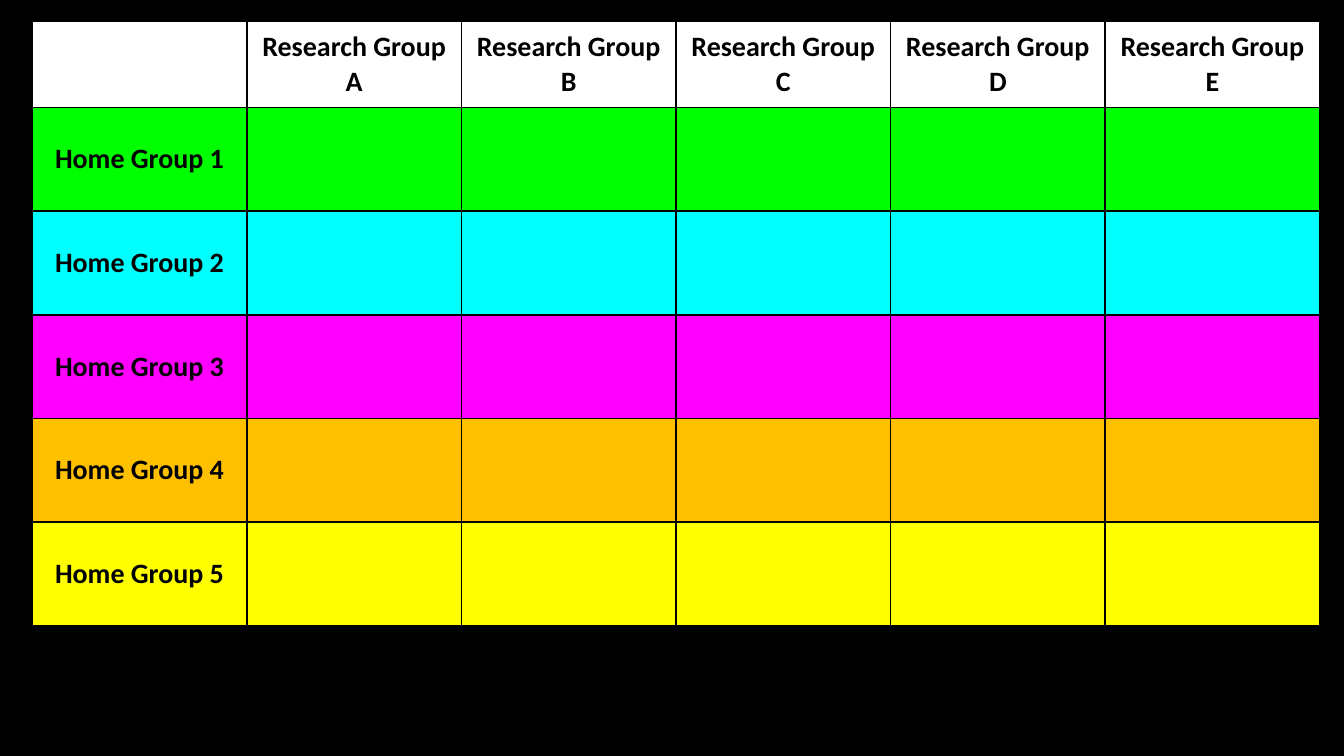
from dataclasses import dataclass

from lxml.etree import SubElement
from pptx import Presentation
from pptx.dml.color import RGBColor
from pptx.enum.text import MSO_ANCHOR, PP_ALIGN
from pptx.oxml.ns import qn
from pptx.util import Inches, Pt


@dataclass(frozen=True)
class Theme:
    font: str = "Calibri"
    size: int = 15
    ink: str = "000000"
    background: str = "000000"
    header: str = "FFFFFF"
    rows: tuple = ("00FF00", "00FFFF", "FF00FF", "FFC000", "FFFF00")
    border: str = "000000"
    border_width: int = 1


THEME = Theme()
RESEARCH_GROUPS = "ABCDE"


def set_borders(cell):
    tc_pr = cell._tc.get_or_add_tcPr()
    for side in ("lnL", "lnR", "lnT", "lnB"):
        ln = SubElement(tc_pr, qn(f"a:{side}"), w=str(Pt(THEME.border_width)))
        fill = SubElement(ln, qn("a:solidFill"))
        SubElement(fill, qn("a:srgbClr"), val=THEME.border)


def format_cell(cell, text, color):
    set_borders(cell)
    cell.fill.solid()
    cell.fill.fore_color.rgb = RGBColor.from_string(color)
    cell.vertical_anchor = MSO_ANCHOR.MIDDLE
    cell.margin_left = cell.margin_right = Inches(0.08)
    cell.margin_top = cell.margin_bottom = Inches(0.04)
    if text:
        p = cell.text_frame.paragraphs[0]
        p.alignment = PP_ALIGN.CENTER
        r = p.add_run()
        r.text = text
        r.font.name = THEME.font
        r.font.size = Pt(THEME.size)
        r.font.bold = True
        r.font.color.rgb = RGBColor.from_string(THEME.ink)


def add_group_grid(s, left, top, width, height, header_height):
    header = [""] + [f"Research Group {name}" for name in RESEARCH_GROUPS]
    blanks = [""] * len(RESEARCH_GROUPS)
    grid = [(THEME.header, header)]
    for number, color in enumerate(THEME.rows, 1):
        grid.append((color, [f"Home Group {number}"] + blanks))

    frame = s.shapes.add_table(len(grid), len(header), left, top, width, height)
    table = frame.table
    table.first_row = False
    table.horz_banding = False
    for column in table.columns:
        column.width = int(width / len(header))
    for row in table.rows:
        row.height = int((height - header_height) / len(THEME.rows))
    table.rows[0].height = header_height

    for i, (color, texts) in enumerate(grid):
        for j, text in enumerate(texts):
            format_cell(table.cell(i, j), text, color)


def main():
    prs = Presentation()
    prs.slide_width = Inches(10)
    prs.slide_height = prs.slide_width * 9 // 16
    s = prs.slides.add_slide(prs.slide_layouts[6])
    s.background.fill.solid()
    s.background.fill.fore_color.rgb = RGBColor.from_string(THEME.background)
    add_group_grid(s, Inches(0.24), Inches(0.16), Inches(9.58), Inches(4.5),
                   header_height=Inches(0.64))
    prs.save("out.pptx")


if __name__ == "__main__":
    main()
